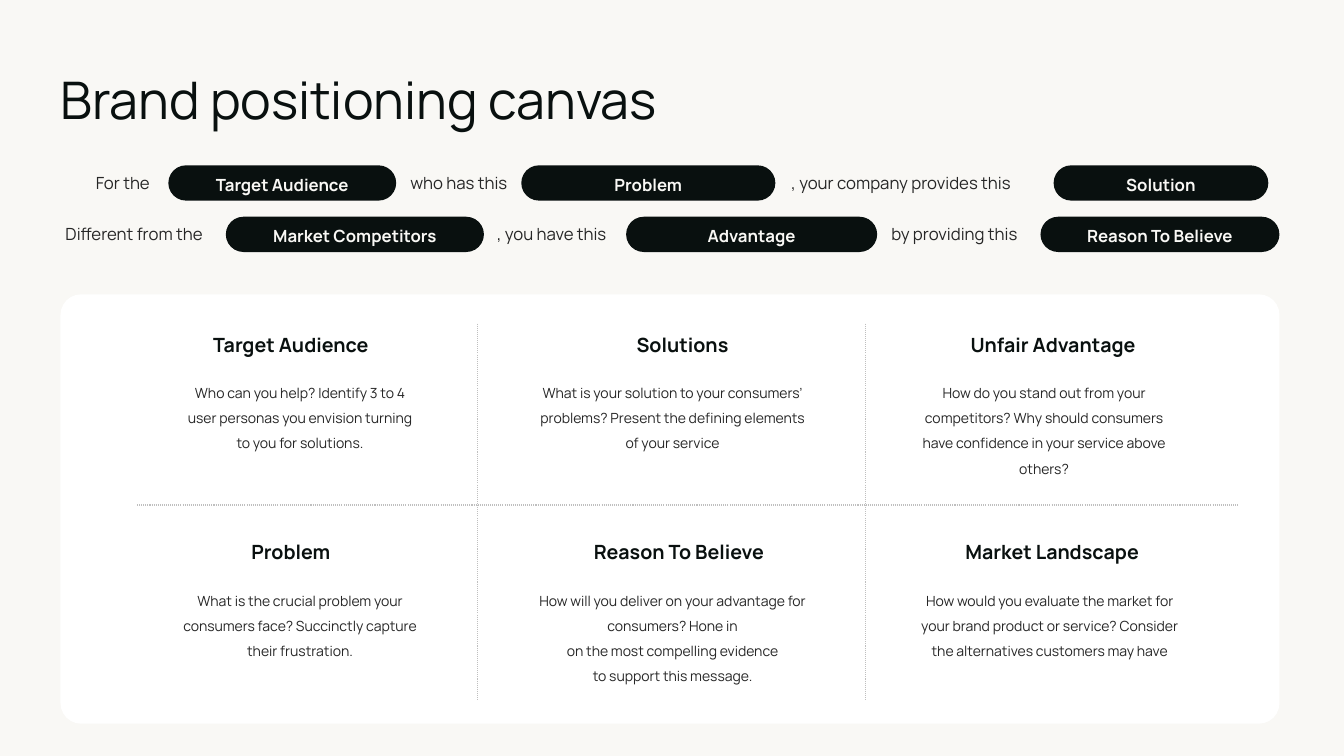
"""Build the brand positioning canvas slide."""
import pptx
import pptx.dml.color
import pptx.enum.dml
import pptx.enum.shapes
import pptx.enum.text
import pptx.oxml.ns
import pptx.util
from dataclasses import dataclass
from lxml import etree

Inches = pptx.util.Inches
RGB = pptx.dml.color.RGBColor.from_string
ALIGN = pptx.enum.text.PP_ALIGN
ANCHOR = pptx.enum.text.MSO_ANCHOR


@dataclass(frozen=True)
class Theme:
    """Colours, font and type sizes."""
    font: str = "Manrope"
    paper: str = "F9F8F5"
    panel: str = "FFFFFF"
    ink: str = "09100F"
    body: str = "262626"
    rule: str = "BFBFBF"
    title_pt: int = 37
    heading_pt: int = 14
    sentence_pt: int = 12
    body_pt: int = 10


theme = Theme()
prs = pptx.Presentation()
prs.slide_width, prs.slide_height = Inches(13.33), Inches(7.5)
s = prs.slides.add_slide(prs.slide_layouts[6])
s.background.fill.solid()
s.background.fill.fore_color.rgb = RGB(theme.paper)


def add_round_rect(x, y, w, h, radius, color):
    """Add a borderless rounded rectangle."""
    sp = s.shapes.add_shape(pptx.enum.shapes.MSO_SHAPE.ROUNDED_RECTANGLE,
                            Inches(x), Inches(y), Inches(w), Inches(h))
    sp.adjustments[0] = radius
    sp.shadow.inherit = False
    sp.fill.solid()
    sp.fill.fore_color.rgb = RGB(color)
    sp.line.fill.background()
    return sp


def write(sp, lines, size, color, bold=False, align=ALIGN.CENTER,
          anchor=ANCHOR.TOP, spacing=None):
    """Write one paragraph per line into a shape without margins."""
    tf = sp.text_frame
    tf.word_wrap = True
    tf.vertical_anchor = anchor
    tf.margin_left = tf.margin_right = tf.margin_top = tf.margin_bottom = 0
    for i, line in enumerate(lines):
        p = tf.add_paragraph() if i else tf.paragraphs[0]
        p.alignment = align
        p.line_spacing = spacing
        r = p.add_run()
        r.text = line
        r.font.name = theme.font
        r.font.size = pptx.util.Pt(size)
        r.font.bold = bold
        r.font.color.rgb = RGB(color)


add_round_rect(0.6, 2.92, 12.09, 4.26, 0.048, theme.panel)

title = s.shapes.add_textbox(Inches(0.6), Inches(0.67), Inches(12.3), Inches(0.68))
write(title, ["Brand positioning canvas"], theme.title_pt, theme.ink, align=ALIGN.LEFT)

sentences = [
    (1.64, [("For the", 0.95, 0.75, "Target Audience", 1.67, 2.26),
            ("who has this", 4.07, 1.26, "Problem", 5.17, 2.52),
            (", your company provides this", 7.85, 2.58, "Solution", 10.45, 2.13)]),
    (2.15, [("Different from the", 0.65, 1.57, "Market Competitors", 2.24, 2.56),
            (", you have this", 4.93, 1.57, "Advantage", 6.21, 2.49),
            ("by providing this", 8.84, 1.57, "Reason To Believe", 10.32, 2.37)]),
]
for y, parts in sentences:
    for words, words_x, words_w, blank, pill_x, pill_w in parts:
        label = s.shapes.add_textbox(Inches(words_x), Inches(y + 0.07),
                                     Inches(words_w), Inches(0.2))
        write(label, [words], theme.sentence_pt, theme.body,
              align=ALIGN.LEFT, anchor=ANCHOR.MIDDLE)
        pill = add_round_rect(pill_x, y, pill_w, 0.35, 0.5, theme.ink)
        write(pill, [blank], theme.sentence_pt, theme.paper, bold=True,
              anchor=ANCHOR.MIDDLE, spacing=1.17)

card_rows = [
    (3.3, [
        ("Target Audience", 1.87, 2.03, 1.83, 2.29,
         ["Who can you help? Identify 3 to 4 user personas you envision turning "
          "to you for solutions."]),
        ("Solutions", 6.12, 1.3, 5.34, 2.66,
         ["What is your solution to your consumers’ problems? Present the "
          "defining elements of your service"]),
        ("Unfair Advantage", 9.35, 2.19, 9.08, 2.55,
         ["How do you stand out from your competitors? Why should consumers "
          "have confidence in your service above others?"]),
    ]),
    (5.36, [
        ("Problem", 2.34, 1.09, 1.77, 2.41,
         ["What is the crucial problem your consumers face? Succinctly capture "
          "their frustration."]),
        ("Reason To Believe", 5.72, 2.03, 5.31, 2.72,
         ["How will you deliver on your advantage for consumers? Hone in",
          "on the most compelling evidence",
          "to support this message."]),
        ("Market Landscape", 9.34, 2.19, 9.05, 2.72,
         ["How would you evaluate the market for your brand product or service? "
          "Consider the alternatives customers may have"]),
    ]),
]
for y, cards in card_rows:
    for heading, head_x, head_w, body_x, body_w, lines in cards:
        head = s.shapes.add_textbox(Inches(head_x), Inches(y), Inches(head_w), Inches(0.24))
        write(head, [heading], theme.heading_pt, theme.ink, bold=True)
        body = s.shapes.add_textbox(Inches(body_x), Inches(y + 0.43),
                                    Inches(body_w), Inches(0.93))
        write(body, lines, theme.body_pt, theme.body, spacing=1.5)

dividers = [(1.36, 5.01, 12.29, 5.01)] + [(x, 3.21, x, 6.95) for x in (4.74, 8.58)]
for ends in dividers:
    rule = s.shapes.add_connector(pptx.enum.shapes.MSO_CONNECTOR.STRAIGHT,
                                  *[Inches(v) for v in ends])
    rule.line.color.rgb = RGB(theme.rule)
    rule.line.width = pptx.util.Pt(0.75)
    rule.line.dash_style = pptx.enum.dml.MSO_LINE.ROUND_DOT
    etree.SubElement(rule._element.spPr, pptx.oxml.ns.qn("a:effectLst"))

prs.save("out.pptx")
